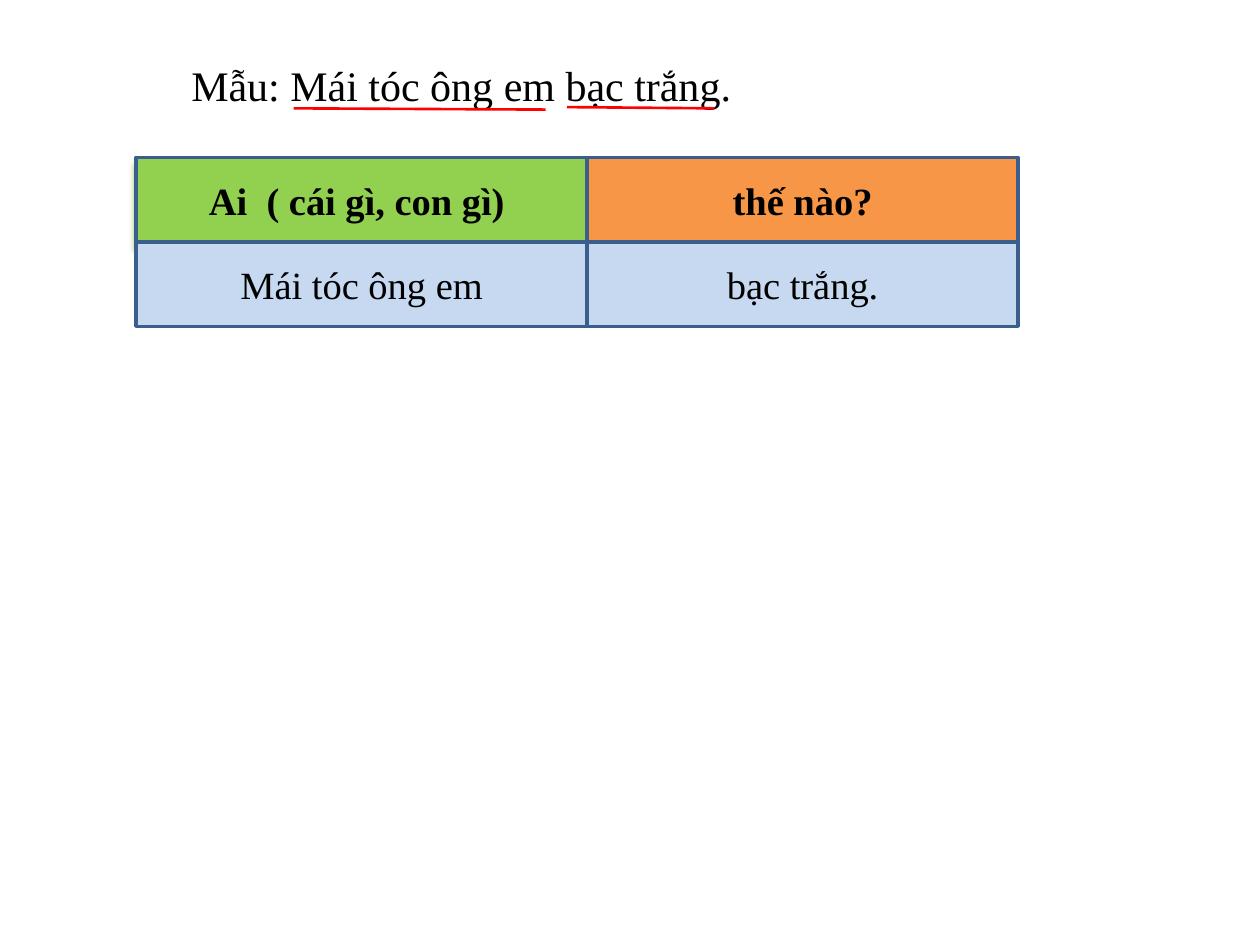
from lxml import etree
from pptx import Presentation
from pptx import util as u
from pptx.dml.color import RGBColor
from pptx.enum import shapes, text
from pptx.oxml.ns import qn

FONT = "Times New Roman"
HEADERS = [("Ai  ( cái gì, con gì) ", "92D050"), ("thế nào?", "F79646")]
ANSWERS = [("Mái tóc ông em", "C6D9F1"), ("bạc trắng.", "C6D9F1")]


def color(value):
    """Turn a hex string into a colour."""
    return RGBColor.from_string(value)


def write(shape, content, size, bold=False):
    """Put one formatted paragraph into a shape and return it."""
    shape.text_frame.text = content
    paragraph = shape.text_frame.paragraphs[0]
    font = paragraph.runs[0].font
    font.name, font.size, font.bold = FONT, u.Pt(size), bold
    font.color.rgb = color("000000")
    return paragraph


def add_effects(shape):
    """Give a shape an empty effect list and return it."""
    return etree.SubElement(shape._element.spPr, qn("a:effectLst"))


def add_shadow(shape, value, blur, distance, angle):
    """Cast a coloured outer shadow from a shape."""
    shadow = etree.SubElement(
        add_effects(shape), qn("a:outerShdw"),
        blurRad=str(u.Pt(blur)), dist=str(u.Pt(distance)),
        dir=str(angle * 60000), rotWithShape="0")
    etree.SubElement(shadow, qn("a:srgbClr"), val=value)


def add_underline(slide, start_x, start_y, end_x, end_y):
    """Draw a red line beneath a part of the sentence."""
    line = slide.shapes.add_connector(
        shapes.MSO_CONNECTOR.STRAIGHT,
        *map(u.Inches, (start_x, start_y, end_x, end_y)))
    line.line.color.rgb = color("FF0000")
    line.line.width = u.Pt(1.5)
    add_effects(line)


def add_sentence(slide, left, top, width, height):
    """Write the sample sentence and underline its two parts."""
    box = slide.shapes.add_textbox(*map(u.Inches, (left, top, width, height)))
    box.text_frame.word_wrap = True
    box.text_frame.auto_size = text.MSO_AUTO_SIZE.SHAPE_TO_FIT_TEXT
    write(box, "Mẫu: Mái tóc ông em bạc trắng.", 24)
    add_underline(slide, left + 0.91, top + 0.44, left + 2.91, top + 0.45)
    add_underline(slide, left + 3.08, top + 0.43, left + 4.25, top + 0.44)


def add_cell(slide, left, top, width, height, content, fill, bold):
    """Add one outlined box with centred text."""
    cell = slide.shapes.add_shape(
        shapes.MSO_SHAPE.RECTANGLE, *map(u.Inches, (left, top, width, height)))
    cell.fill.solid()
    cell.fill.fore_color.rgb = color(fill)
    cell.line.color.rgb = color("3A5F8C")
    cell.line.width = u.Pt(2)
    cell.text_frame.vertical_anchor = text.MSO_ANCHOR.MIDDLE
    write(cell, content, 22, bold).alignment = text.PP_ALIGN.CENTER
    return cell


def add_grid(slide, left, top, width, height):
    """Place the headers above the answers in two columns."""
    row_height = height / 2
    first_width = 3.58
    columns = [(left, first_width), (left + first_width, width - first_width)]
    for row, entries in enumerate((HEADERS, ANSWERS)):
        for column, (content, fill) in enumerate(entries):
            x, cell_width = columns[column]
            cell = add_cell(slide, x, top + row * row_height, cell_width,
                            row_height, content, fill, row == 0)
            if row == column == 0:
                add_shadow(cell, "9BBB59", 4, 4, 90)
            else:
                cell.shadow.inherit = False


def main():
    """Build and save the slide."""
    presentation = Presentation()
    presentation.slide_width = u.Inches(10)
    presentation.slide_height = u.Inches(7.5)
    slide = presentation.slides.add_slide(presentation.slide_layouts[6])
    add_sentence(slide, 1.42, 0.42, 6.67, 0.5)
    add_grid(slide, 1.08, 1.25, 7, 1.34)
    presentation.save("out.pptx")


if __name__ == "__main__":
    main()
